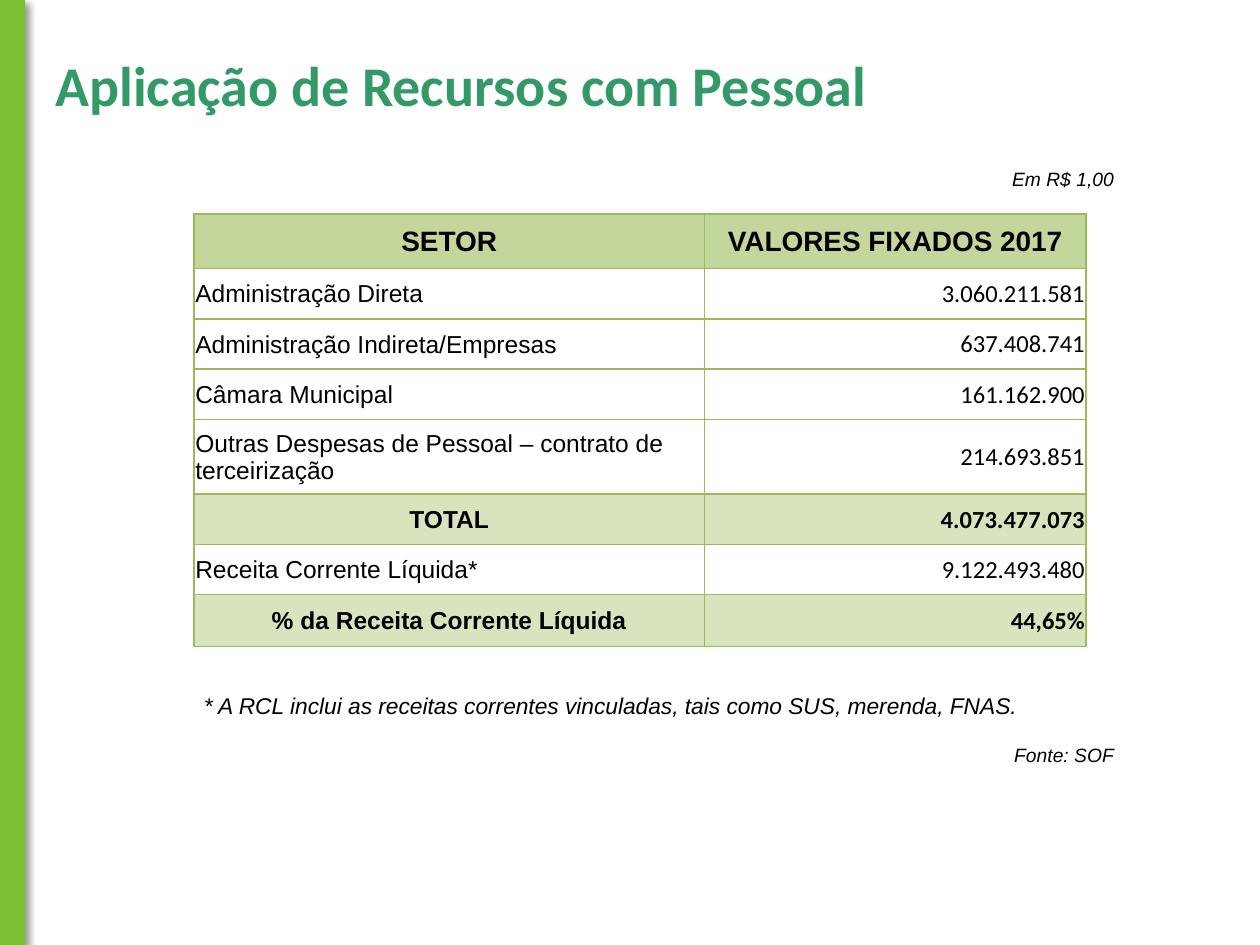
from lxml.etree import SubElement
from pptx import Presentation
from pptx.dml.color import RGBColor
from pptx.enum.shapes import MSO_SHAPE
from pptx.enum.text import MSO_ANCHOR, MSO_AUTO_SIZE, PP_ALIGN
from pptx.oxml.ns import qn
from pptx.util import Inches, Pt

THEME = {
    "sans": "Arial", "num": "Calibri",
    "title": "339966", "ink": "000000", "bar": "7CBF33",
    "line": "9BBB59", "head": "C3D69B", "total": "D7E4BD",
    "title_pt": 32, "head_pt": 16, "cell_pt": 14, "foot_pt": 13, "note_pt": 11,
}

TITLE = "Aplicação de Recursos com Pessoal"
# kind, label, value, row height
ROWS = [
    ("head", "SETOR", "VALORES FIXADOS 2017", 0.43),
    ("item", "Administração Direta", "3.060.211.581", 0.4),
    ("item", "Administração Indireta/Empresas", "637.408.741", 0.4),
    ("item", "Câmara Municipal", "161.162.900", 0.4),
    ("item", "Outras Despesas de Pessoal – contrato de terceirização",
     "214.693.851", 0.59),
    ("total", "TOTAL", "4.073.477.073", 0.4),
    ("item", "Receita Corrente Líquida*", "9.122.493.480", 0.4),
    ("total", "% da Receita Corrente Líquida", "44,65%", 0.41),
]
COLS = [4.05, 3.03]
# text, box, size, alignment
NOTES = [
    ("Em R$ 1,00", (7.92, 1.28, 1.02, 0.29), "note_pt", PP_ALIGN.RIGHT),
    ("* A RCL inclui as receitas correntes vinculadas, tais como SUS, merenda, FNAS.",
     (1.52, 5.44, 8.92, 0.31), "foot_pt", PP_ALIGN.JUSTIFY),
    ("Fonte: SOF", (7.92, 5.85, 1.02, 0.29), "note_pt", PP_ALIGN.RIGHT),
]


def rgb(key):
    return RGBColor.from_string(THEME[key])


def write(frame, text, size, face="sans", ink="ink", bold=False, italic=False,
          align=PP_ALIGN.LEFT):
    frame.text = text
    para = frame.paragraphs[0]
    para.alignment = align
    font = para.runs[0].font
    font.name, font.size = THEME[face], Pt(THEME[size])
    font.bold, font.italic = bold, italic
    font.color.rgb = rgb(ink)


def add_fill(node, color, alpha=None):
    fill = SubElement(node, qn("a:solidFill")) if alpha is None else node
    tone = SubElement(fill, qn("a:srgbClr"), val=color)
    if alpha is not None:
        SubElement(tone, qn("a:alpha"), val=str(alpha * 1000))


def add_bar(slide):
    bar = slide.shapes.add_shape(
        MSO_SHAPE.RECTANGLE, 0, 0, Inches(0.2), Inches(7.5))
    bar.fill.solid()
    bar.fill.fore_color.rgb = rgb("bar")
    bar.line.fill.background()
    bar.shadow.inherit = False
    effects = bar._element.spPr.find(qn("a:effectLst"))
    shade = SubElement(effects, qn("a:outerShdw"), blurRad=str(Pt(4)),
                       dist=str(Pt(3)), dir=str(45 * 60000), rotWithShape="0")
    add_fill(shade, THEME["ink"], 40)


def style_cell(cell, kind, col, text):
    cell.margin_left = cell.margin_right = cell.margin_top = Inches(0.01)
    cell.margin_bottom = 0
    cell.vertical_anchor = MSO_ANCHOR.MIDDLE
    props = cell._tc.get_or_add_tcPr()
    for side in ("lnL", "lnR", "lnT", "lnB"):
        add_fill(SubElement(props, qn("a:" + side), w=str(Pt(1))), THEME["line"])
    if kind == "item":
        cell.fill.background()
    else:
        cell.fill.solid()
        cell.fill.fore_color.rgb = rgb(kind)
    if kind == "head" or (kind == "total" and col == 0):
        align = PP_ALIGN.CENTER
    else:
        align = PP_ALIGN.RIGHT if col else PP_ALIGN.LEFT
    write(cell.text_frame, text, "head_pt" if kind == "head" else "cell_pt",
          face="num" if col and kind != "head" else "sans",
          bold=kind != "item", align=align)


def add_grid(slide):
    high = sum(row[-1] for row in ROWS)
    grid = slide.shapes.add_table(
        len(ROWS), len(COLS), Inches(1.54), Inches(1.7),
        Inches(sum(COLS)), Inches(high)).table
    for col, wide in zip(grid.columns, COLS):
        col.width = Inches(wide)
    for r, (kind, label, value, tall) in enumerate(ROWS):
        grid.rows[r].height = Inches(tall)
        for c, text in enumerate((label, value)):
            style_cell(grid.cell(r, c), kind, c, text)


def main():
    deck = Presentation()
    deck.slide_width, deck.slide_height = Inches(10), Inches(7.5)
    slide = deck.slides.add_slide(deck.slide_layouts[5])
    head = slide.shapes.title
    head.left, head.top, head.width, head.height = map(
        Inches, (0.34, 0.35, 8.27, 0.64))
    head.text_frame.auto_size = MSO_AUTO_SIZE.NONE
    head.text_frame.vertical_anchor = MSO_ANCHOR.TOP
    write(head.text_frame, TITLE, "title_pt", "num", "title", bold=True)
    for text, box, size, align in NOTES:
        frame = slide.shapes.add_textbox(*map(Inches, box)).text_frame
        frame.word_wrap = align == PP_ALIGN.JUSTIFY
        write(frame, text, size, italic=True, align=align)
    add_bar(slide)
    add_grid(slide)
    deck.save("out.pptx")


if __name__ == "__main__":
    main()
